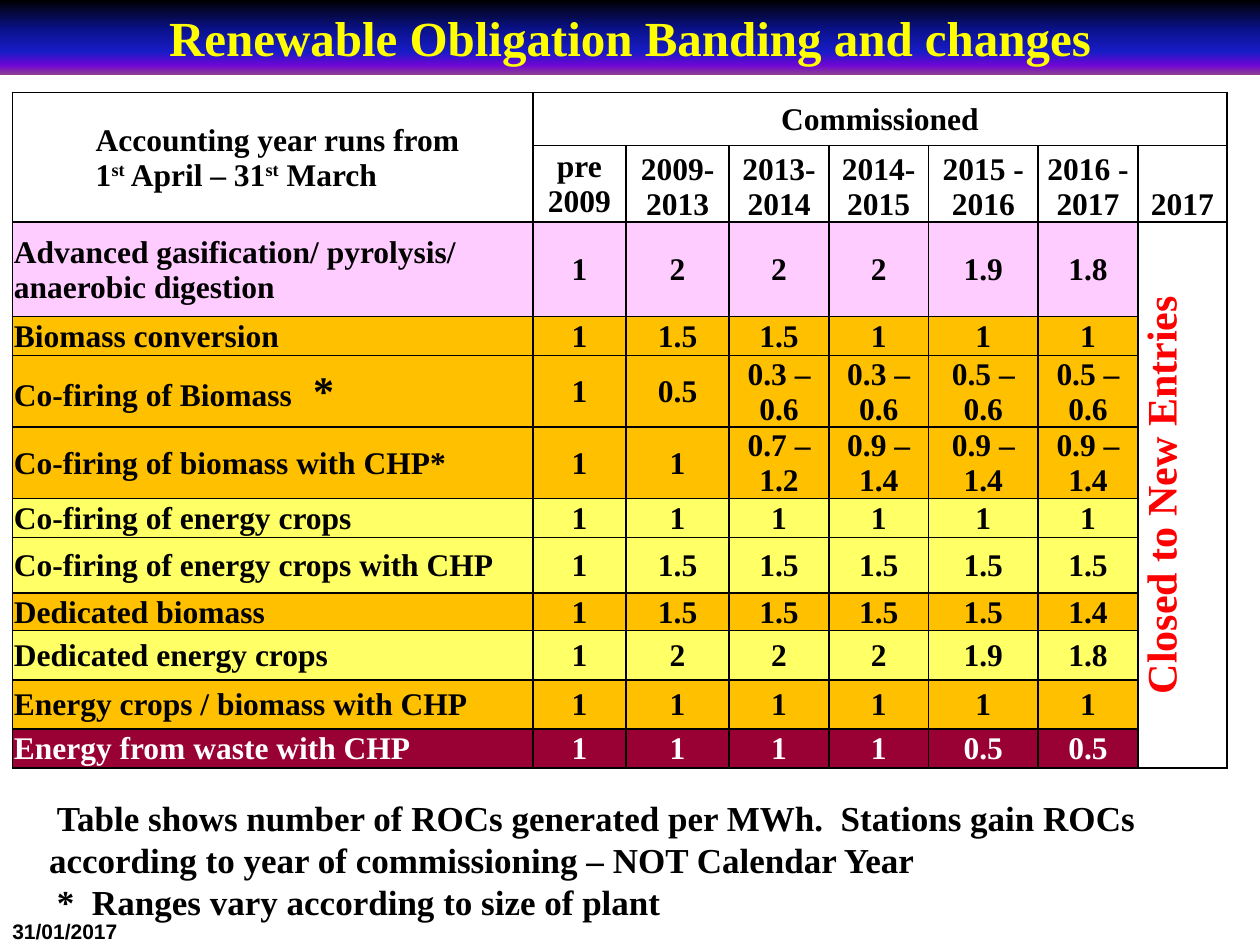
import pptx
import pptx.util
import pptx.dml.color
import pptx.enum.text
import pptx.oxml
import pptx.oxml.ns

Cm, Pt = pptx.util.Cm, pptx.util.Pt
ALIGN = pptx.enum.text.PP_ALIGN
ANCHOR = pptx.enum.text.MSO_ANCHOR
SERIF = "Times New Roman"
COLORS = {
    "black": "000000", "white": "FFFFFF", "title": "FFFF00", "closed": "FF0000",
    "pink": "FFCCFF", "orange": "FFC000", "yellow": "FFFF66", "maroon": "990033",
}
BANNER_STOPS = [(0, "000000"), (40, "0A128C"), (70, "181CC7"),
                (88, "7005D4"), (100, "8C3D91")]

COL_WIDTHS = [10.49, 1.88, 2.08, 2.01, 2.01, 2.21, 2.01, 1.8]
ROW_HEIGHTS = [1.07, 1.55, 1.9, 0.79, 1.42, 1.42, 0.79, 1.12, 0.76, 0.99, 0.99, 0.79]
PERIODS = ["pre 2009", "2009-2013", "2013-2014", "2014-2015",
           "2015 - 2016", "2016 - 2017", "2017"]
BANDS = [
    ("pink", "Advanced gasification/ pyrolysis/ anaerobic digestion",
     ["1", "2", "2", "2", "1.9", "1.8"]),
    ("orange", "Biomass conversion", ["1", "1.5", "1.5", "1", "1", "1"]),
    ("orange", "Co-firing of Biomass",
     ["1", "0.5", "0.3 – 0.6", "0.3 – 0.6", "0.5 – 0.6", "0.5 – 0.6"]),
    ("orange", "Co-firing of biomass with CHP*",
     ["1", "1", "0.7 – 1.2", "0.9 – 1.4", "0.9 – 1.4", "0.9 – 1.4"]),
    ("yellow", "Co-firing of energy crops", ["1", "1", "1", "1", "1", "1"]),
    ("yellow", "Co-firing of energy crops with CHP",
     ["1", "1.5", "1.5", "1.5", "1.5", "1.5"]),
    ("orange", "Dedicated biomass", ["1", "1.5", "1.5", "1.5", "1.5", "1.4"]),
    ("yellow", "Dedicated energy crops", ["1", "2", "2", "2", "1.9", "1.8"]),
    ("orange", "Energy crops / biomass with CHP", ["1", "1", "1", "1", "1", "1"]),
    ("maroon", "Energy from waste with CHP", ["1", "1", "1", "1", "0.5", "0.5"]),
]


def rgb(name):
    return pptx.dml.color.RGBColor.from_string(COLORS[name])


def parse_xml(tag, body):
    ns = pptx.oxml.ns.nsdecls("a")
    name = tag.split()[0]
    return pptx.oxml.parse_xml(f"<a:{tag} {ns}>{body}</a:{name}>")


def style(p, size, color="black", font=SERIF, align=ALIGN.LEFT):
    p.alignment = align
    p.font.size, p.font.bold, p.font.name = Pt(size), True, font
    p.font.color.rgb = rgb(color)


def indent(p, left, first=0):
    pPr = p._p.get_or_add_pPr()
    pPr.set("marL", str(Cm(left)))
    pPr.set("indent", str(Cm(first)))


def add_title(slide, text):
    sp = slide.shapes.title
    sp.left, sp.top, sp.width, sp.height = Cm(0), Cm(0), Cm(25.4), Cm(1.5)
    stops = "".join(f'<a:gs pos="{pos * 1000}"><a:srgbClr val="{color}"/></a:gs>'
                    for pos, color in BANNER_STOPS)
    sp._element.spPr.append(parse_xml(
        "gradFill", f'<a:gsLst>{stops}</a:gsLst><a:lin ang="5400000" scaled="0"/>'))
    tf = sp.text_frame
    tf.auto_size = pptx.enum.text.MSO_AUTO_SIZE.NONE
    tf.vertical_anchor = ANCHOR.MIDDLE
    tf.text = text
    style(tf.paragraphs[0], 28, "title", align=ALIGN.CENTER)


def add_text(slide, box, lines, size, font=SERIF):
    tf = slide.shapes.add_textbox(*map(Cm, box)).text_frame
    tf.word_wrap = True
    for i, line in enumerate(lines):
        p = tf.paragraphs[0] if i == 0 else tf.add_paragraph()
        p.text = line
        style(p, size, font=font)
    return tf


def format_cell(cell, fill=None):
    cell.margin_left = cell.margin_right = cell.margin_top = Cm(0.03)
    cell.margin_bottom = 0
    cell.vertical_anchor = ANCHOR.MIDDLE
    if fill:
        cell.fill.solid()
        cell.fill.fore_color.rgb = rgb(fill)
    else:
        cell.fill.background()
    line = f'<a:solidFill><a:srgbClr val="{COLORS["black"]}"/></a:solidFill>'
    tcPr = cell._tc.get_or_add_tcPr()
    for i, side in enumerate("LRTB"):
        tcPr.insert(i, parse_xml(f'ln{side} w="{Pt(1)}"', line))


def write_cell(cell, text, size=18, color="black", align=ALIGN.CENTER):
    cell.text = text
    style(cell.text_frame.paragraphs[0], size, color, align=align)


def write_corner(cell):
    write_cell(cell, "Accounting year runs from", align=ALIGN.LEFT)
    tf = cell.text_frame
    p = tf.add_paragraph()
    for text, raised in [("1", False), ("st", True), (" April – 31", False),
                         ("st", True), (" March", False)]:
        r = p.add_run()
        r.text = text
        if raised:
            r.font._element.set("baseline", "30000")
    style(p, 18)
    for p in tf.paragraphs:
        indent(p, 1.65)


def add_band_table(slide):
    table = slide.shapes.add_table(
        len(ROW_HEIGHTS), len(COL_WIDTHS), Cm(0.25), Cm(1.86),
        Cm(sum(COL_WIDTHS)), Cm(sum(ROW_HEIGHTS))).table
    table.first_row = table.horz_banding = False
    for col, width in zip(table.columns, COL_WIDTHS):
        col.width = Cm(width)
    for row, height in zip(table.rows, ROW_HEIGHTS):
        row.height = Cm(height)
    fills = [None, None] + [band[0] for band in BANDS]
    last = len(COL_WIDTHS) - 1
    for row, fill in zip(table.rows, fills):
        for c, cell in enumerate(row.cells):
            format_cell(cell, "white" if fill and c == last else fill)

    # Headings
    table.cell(0, 0).merge(table.cell(1, 0))
    table.cell(0, 1).merge(table.cell(0, last))
    write_corner(table.cell(0, 0))
    write_cell(table.cell(0, 1), "Commissioned")
    for c, period in enumerate(PERIODS, 1):
        write_cell(table.cell(1, c), period)
        if c > 1:
            table.cell(1, c).vertical_anchor = ANCHOR.BOTTOM

    # Technology bands
    for r, (fill, label, values) in enumerate(BANDS, 2):
        color = "white" if fill == "maroon" else "black"
        write_cell(table.cell(r, 0), label, color=color, align=ALIGN.LEFT)
        for c, value in enumerate(values, 1):
            write_cell(table.cell(r, c), value, color=color)
    star = table.cell(4, 0).text_frame.paragraphs[0].add_run()
    star.text = "  *"
    star.font.size = Pt(24)

    # Closed column
    closed = table.cell(2, last)
    closed.merge(table.cell(len(ROW_HEIGHTS) - 1, last))
    write_cell(closed, "Closed to New Entries", 24, "closed")
    closed._tc.get_or_add_tcPr().set("vert", "vert270")


def main():
    prs = pptx.Presentation()
    prs.slide_width, prs.slide_height = Cm(25.4), Cm(19.05)
    slide = prs.slides.add_slide(prs.slide_layouts[5])
    add_title(slide, "Renewable Obligation Banding and changes")
    add_band_table(slide)

    # Notes below the table
    tf = add_text(slide, (0, 15.93, 24.41, 2.82), [
        "Table shows number of ROCs generated per MWh.  Stations gain ROCs "
        "according to year of commissioning – NOT Calendar Year",
        "*  Ranges vary according to size of plant"], 20)
    indent(tf.paragraphs[0], 0.74, 0.16)
    indent(tf.paragraphs[1], 0.9)

    # Date
    add_text(slide, (0, 18.39, 5.92, 1.32), ["31/01/2017"], 12, "Arial")
    prs.save("out.pptx")


if __name__ == "__main__":
    main()
